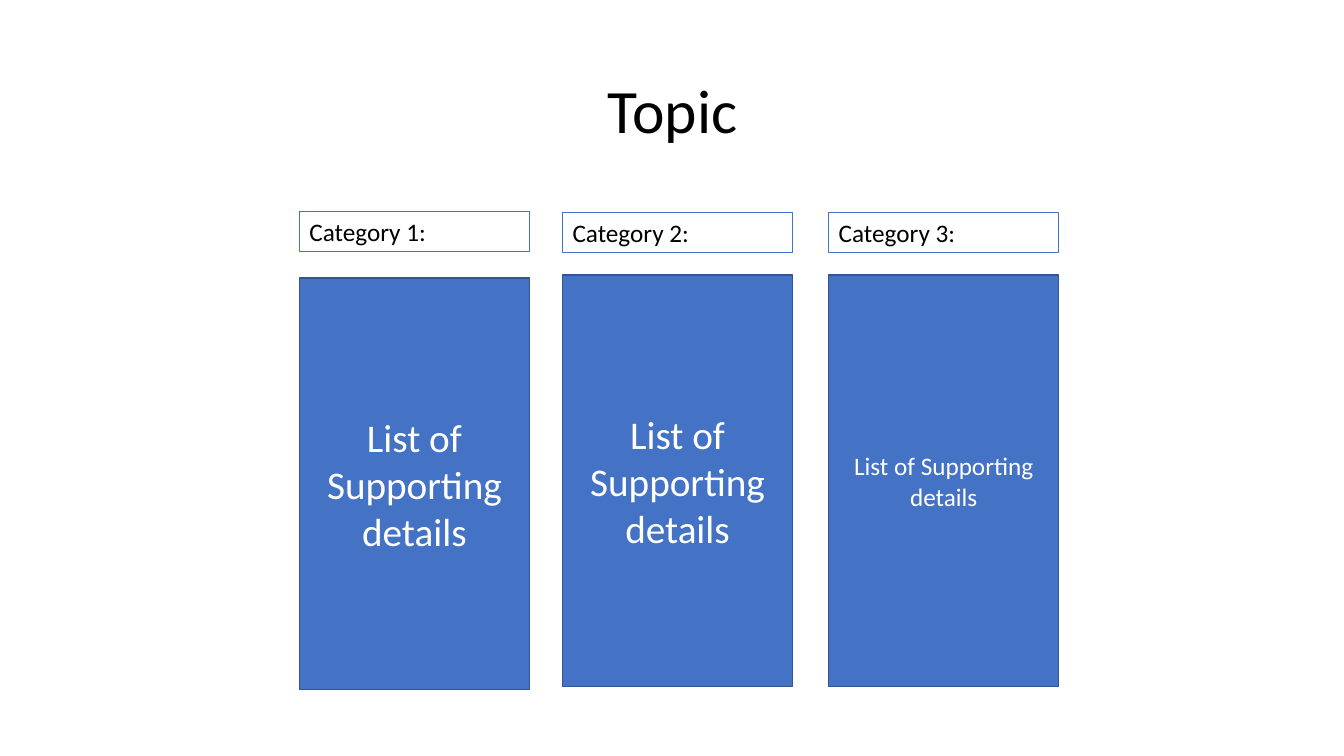
import pptx
import pptx.dml.color
import pptx.enum.shapes
import pptx.enum.text
import pptx.util

FONT = "Calibri"
BLUE = "4472C4"
DARK_BLUE = "325491"
BLACK = "000000"
WHITE = "FFFFFF"
SLIDE_WIDTH, SLIDE_HEIGHT = 13.33, 7.5
COLUMN_WIDTH, LABEL_HEIGHT, DETAILS_HEIGHT = 2.28, 0.4, 4.08
COLUMNS = [
    ("Category 1:", 2.97, 2.1, 0.66, 28),
    ("Category 2:", 5.58, 2.11, 0.62, 28),
    ("Category 3:", 8.22, 2.11, 0.62, 18),
]
ALIGN = pptx.enum.text.PP_ALIGN
ANCHOR = pptx.enum.text.MSO_ANCHOR


def color(value):
    """Turn a hex string into a colour."""
    return pptx.dml.color.RGBColor.from_string(value)


def place(shape, box):
    """Move a shape to a box of left, top, width and height in inches."""
    shape.left, shape.top, shape.width, shape.height = map(pptx.util.Inches, box)


def write(shape, text, size, text_color, alignment, anchor):
    """Put one formatted paragraph into a shape."""
    frame = shape.text_frame
    frame.text = text
    frame.word_wrap = True
    frame.vertical_anchor = anchor
    paragraph = frame.paragraphs[0]
    paragraph.alignment = alignment
    paragraph.font.name = FONT
    paragraph.font.size = pptx.util.Pt(size)
    paragraph.font.color.rgb = color(text_color)


def add_box(slide, box, fill, line, line_width):
    """Add a rectangle, unfilled when fill is None."""
    shape = slide.shapes.add_shape(
        pptx.enum.shapes.MSO_SHAPE.RECTANGLE, *map(pptx.util.Inches, box))
    shape.shadow.inherit = False
    if fill is None:
        shape.fill.background()
    else:
        shape.fill.solid()
        shape.fill.fore_color.rgb = color(fill)
    shape.line.color.rgb = color(line)
    shape.line.width = pptx.util.Pt(line_width)
    return shape


def add_title(slide, box):
    """Fill the title placeholder."""
    title = slide.shapes.title
    place(title, box)
    write(title, "Topic", 44, BLACK, ALIGN.CENTER, ANCHOR.MIDDLE)
    title.text_frame.paragraphs[0].line_spacing = 0.9


def add_column(slide, box, category, details_offset, details_size):
    """Add a category label with its details panel below."""
    left, top, width, height = box
    label = add_box(slide, (left, top, width, LABEL_HEIGHT), None, BLUE, 0.75)
    write(label, category, 18, BLACK, ALIGN.LEFT, ANCHOR.TOP)
    details_box = (left, top + details_offset, width, height - details_offset)
    details = add_box(slide, details_box, BLUE, DARK_BLUE, 1)
    write(details, "List of Supporting details", details_size, WHITE,
          ALIGN.CENTER, ANCHOR.MIDDLE)


def main():
    """Build and save the topic slide."""
    presentation = pptx.Presentation()
    presentation.slide_width = pptx.util.Inches(SLIDE_WIDTH)
    presentation.slide_height = pptx.util.Inches(SLIDE_HEIGHT)
    slide = presentation.slides.add_slide(presentation.slide_layouts[5])
    add_title(slide, (0.92, 0.4, 11.5, 1.45))
    for category, left, top, offset, size in COLUMNS:
        box = (left, top, COLUMN_WIDTH, offset + DETAILS_HEIGHT)
        add_column(slide, box, category, offset, size)
    presentation.save("out.pptx")


if __name__ == "__main__":
    main()
